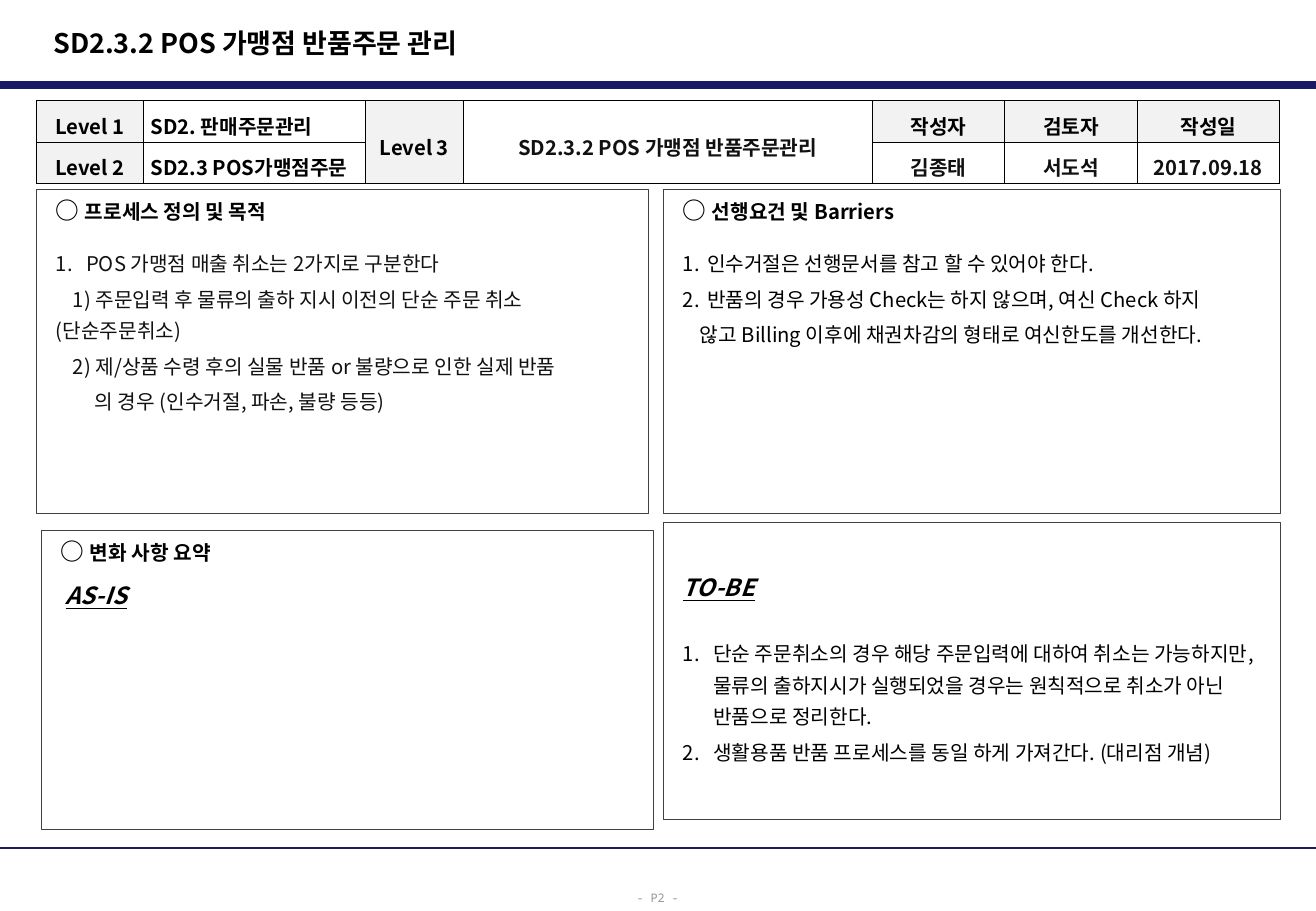
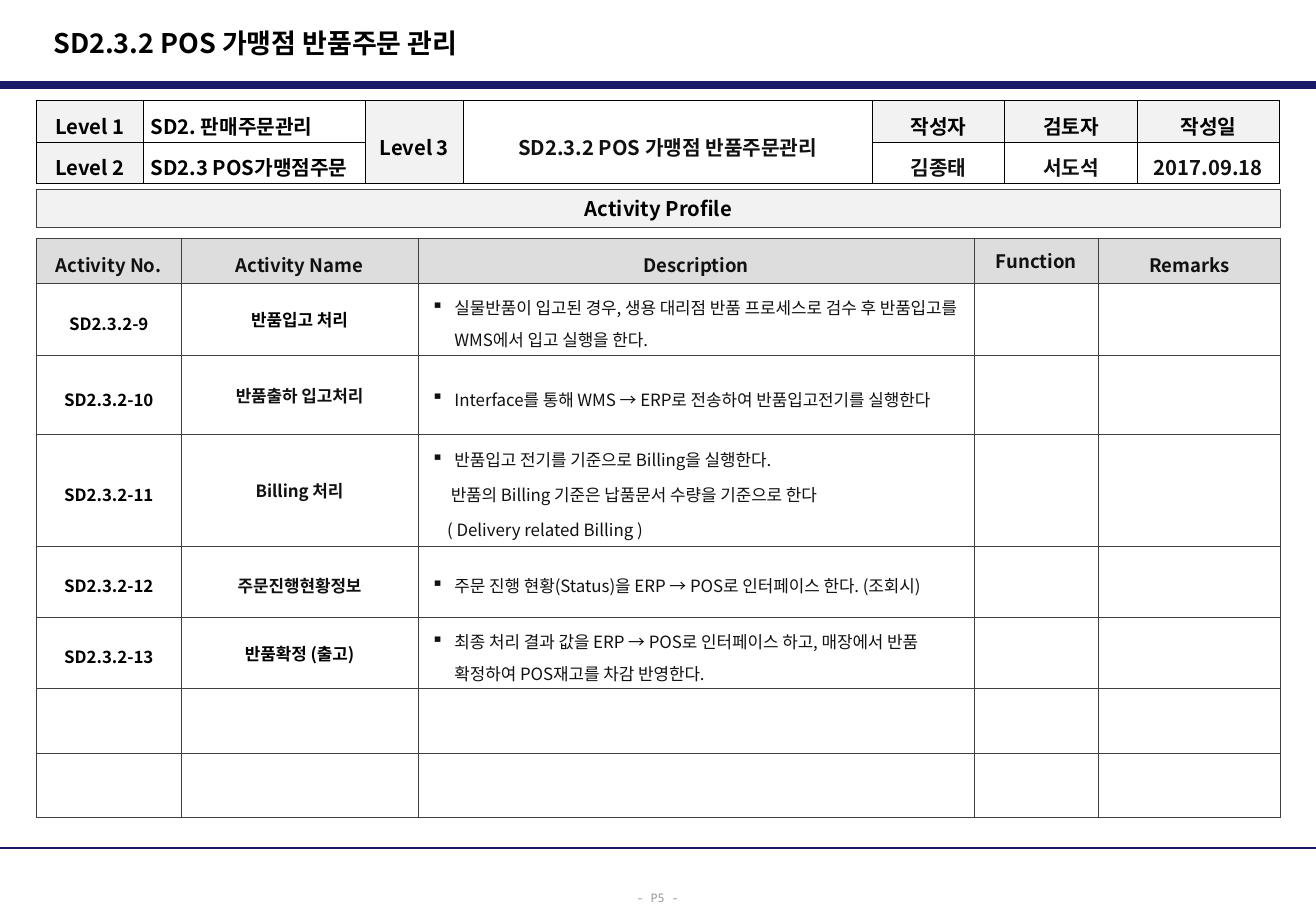
from dataclasses import dataclass

from lxml import etree
from pptx import Presentation
from pptx import util as u
from pptx.dml.color import RGBColor
from pptx.enum import shapes, text
from pptx.oxml import ns

FONT, PAGE_FONT = "Noto Sans CJK KR", "Noto Sans Mono"
NAVY, BLACK, INK, GREY = "191966", "000000", "111111", "969696"
BORDER, PALE, HEADER = "404040", "F2F2F2", "DDDDDD"
WIDTH, HEIGHT = 10.83, 7.5
LEFT, CONTENT_WIDTH = 0.3, 10.24
PANEL_INSETS = (0.16, 0.05, 0.1, 0.05)
LOOSE = 1.3
CENTER = text.PP_ALIGN.CENTER


@dataclass
class Para:
    """One paragraph with its formatting."""
    text: str
    size: float = 12
    color: str = BLACK
    bold: bool = False
    slanted: bool = False
    align: object = None
    spacing: float = None
    before: float = 0
    margin: float = 0
    first: float = 0
    bullet: str = ""
    mark: str = ""
    font: str = FONT


def rgb(value):
    """Turn a hex string into a colour."""
    return RGBColor.from_string(value)


def add_element(parent, tag, **attributes):
    """Append a drawing element."""
    return etree.SubElement(parent, ns.qn(tag), attributes)


def format_run(run, para, size):
    """Apply a paragraph's character format to a run."""
    font = run.font
    font.size, font.bold = u.Pt(size), para.bold
    font.color.rgb = rgb(para.color)
    font.name = para.font
    if para.slanted:
        font.italic = font.underline = True
    add_element(run._r.get_or_add_rPr(), "a:ea", typeface=para.font)


def write(frame, paras):
    """Fill a text frame with paragraphs."""
    for index, para in enumerate(paras):
        line = frame.add_paragraph() if index else frame.paragraphs[0]
        props = line._p.get_or_add_pPr()
        props.set("marL", str(u.Inches(para.margin)))
        props.set("indent", str(u.Inches(para.first)))
        if para.bullet == "1.":
            add_element(props, "a:buAutoNum", type="arabicPeriod")
        elif para.bullet:
            add_element(props, "a:buChar", char=para.bullet)
        else:
            add_element(props, "a:buNone")
        line.text = para.mark or para.text
        line.alignment = para.align or text.PP_ALIGN.LEFT
        if para.spacing:
            line.line_spacing = para.spacing
        if index:
            line.space_before = u.Pt(para.before)
        if para.mark:
            format_run(line.runs[0], para, 14)
            line.add_run().text = para.text
        format_run(line.runs[-1], para, para.size)


def set_insets(target, insets):
    """Set the left, top, right and bottom margins."""
    (target.margin_left, target.margin_top,
     target.margin_right, target.margin_bottom) = map(u.Inches, insets)


def add_rule(slide, y, weight):
    """Draw a full-width navy rule."""
    rule = slide.shapes.add_connector(
        shapes.MSO_CONNECTOR.STRAIGHT, 0, u.Inches(y), u.Inches(WIDTH), u.Inches(y))
    rule.line.color.rgb, rule.line.width = rgb(NAVY), u.Pt(weight)
    add_element(rule._element.spPr, "a:effectLst")


def add_label(slide, box, para, wrap=True, anchor=text.MSO_ANCHOR.TOP):
    """Add a text box with one paragraph."""
    frame = slide.shapes.add_textbox(*map(u.Inches, box)).text_frame
    frame.word_wrap, frame.vertical_anchor = wrap, anchor
    write(frame, [para])


def add_panel(slide, box, paras, insets=PANEL_INSETS, fill=None,
              anchor=text.MSO_ANCHOR.TOP):
    """Add a thin-bordered panel of text."""
    panel = slide.shapes.add_shape(
        shapes.MSO_SHAPE.RECTANGLE, *map(u.Inches, box))
    panel.shadow.inherit = False
    panel.line.color.rgb, panel.line.width = rgb(BORDER), u.Pt(0.5)
    if fill:
        panel.fill.solid()
        panel.fill.fore_color.rgb = rgb(fill)
    else:
        panel.fill.background()
    frame = panel.text_frame
    frame.word_wrap, frame.vertical_anchor = True, anchor
    set_insets(frame, insets)
    write(frame, paras)


def add_grid(slide, top, columns, rows):
    """Add an unstyled table of the given column widths and row heights."""
    grid = slide.shapes.add_table(
        len(rows), len(columns), u.Inches(LEFT), u.Inches(top),
        u.Inches(CONTENT_WIDTH), u.Inches(sum(rows))).table
    grid.first_row = grid.horz_banding = False
    for column, width in zip(grid.columns, columns):
        column.width = u.Inches(width)
    for row, height in zip(grid.rows, rows):
        row.height = u.Inches(height)
    return grid


def fill_cell(cell, paras, insets, border, fill=None):
    """Give a cell its borders, fill and text."""
    props = cell._tc.get_or_add_tcPr()
    for side in ("a:lnL", "a:lnR", "a:lnT", "a:lnB"):
        edge = add_element(props, side, w=str(u.Pt(0.5)))
        add_element(add_element(edge, "a:solidFill"), "a:srgbClr", val=border)
    if fill:
        cell.fill.solid()
        cell.fill.fore_color.rgb = rgb(fill)
    else:
        cell.fill.background()
    cell.vertical_anchor = text.MSO_ANCHOR.MIDDLE
    set_insets(cell, insets)
    write(cell.text_frame, paras)


def add_level_table(slide):
    """Add the process level and author table."""
    grid = add_grid(slide, 0.83, [0.88, 1.83, 0.8, 3.37, 1.09, 1.09, 1.17], [0.34, 0.34])
    rows = [
        ["Level 1", "SD2. 판매주문관리", "Level 3", "SD2.3.2 POS 가맹점 반품주문관리",
         "작성자", "검토자", "작성일"],
        ["Level 2", "SD2.3 POS가맹점주문", "", "", "김종태", "서도석", "2017.09.18"],
    ]
    for column in (2, 3):
        grid.cell(0, column).merge(grid.cell(1, column))
    for r, row in enumerate(rows):
        for c, words in enumerate(row):
            label = c in (0, 2) or (r == 0 and c > 3)
            para = Para(words, bold=True, spacing=LOOSE,
                        color=BLACK if label or c == 1 else INK,
                        align=None if c == 1 else CENTER)
            fill_cell(grid.cell(r, c), [para] if words else [],
                      (0.06, 0.01, 0.06, 0.01), BLACK, PALE if label else None)


def add_activity_table(slide):
    """Add the table of activities."""
    def step(words):
        return Para(words, 10, INK, spacing=LOOSE, margin=0.19, first=-0.19, bullet="▪")

    def note(words, margin):
        return Para(words, 10, INK, spacing=LOOSE, before=2, margin=margin)

    activities = [
        ("SD2.3.2-9", "반품입고 처리",
         [step("실물반품이 입고된 경우, 생용 대리점 반품 프로세스로 검수 후 반품입고를 WMS에서 입고 실행을 한다.")]),
        ("SD2.3.2-10", "반품출하 입고처리",
         [step("Interface를 통해 WMS → ERP로 전송하여 반품입고전기를 실행한다")]),
        ("SD2.3.2-11", "Billing 처리",
         [step("반품입고 전기를 기준으로 Billing을 실행한다."),
          note("반품의 Billing 기준은 납품문서 수량을 기준으로 한다", 0.16),
          note("( Delivery related Billing )", 0.13)]),
        ("SD2.3.2-12", "주문진행현황정보",
         [step("주문 진행 현황(Status)을 ERP → POS로 인터페이스 한다. (조회시)")]),
        ("SD2.3.2-13", "반품확정 (출고)",
         [step("최종 처리 결과 값을 ERP → POS로 인터페이스 하고, 매장에서 반품 확정하여 POS재고를 차감 반영한다.")]),
    ]
    grid = add_grid(slide, 1.96, [1.19, 1.95, 4.58, 1.02, 1.5],
                    [0.37, 0.6, 0.65, 0.92, 0.58, 0.59, 0.53, 0.53])
    insets = (0.11, 0.04, 0.11, 0.04)
    headings = ["Activity No.", "Activity Name", "Description", "Function", "Remarks"]
    for c, words in enumerate(headings):
        plain = words == "Function"
        para = Para(words, 11, INK, True, align=CENTER, spacing=None if plain else LOOSE)
        fill_cell(grid.cell(0, c), [para], (0.11, 0, 0.11, 0) if plain else insets,
                  BORDER, HEADER)
    for r in range(1, len(grid.rows)):
        contents = [[] for _ in headings]
        if r <= len(activities):
            number, name, steps = activities[r - 1]
            name_spacing = LOOSE if number == "SD2.3.2-12" else None
            contents[:3] = [
                [Para(number, 10, bold=True, align=CENTER, spacing=LOOSE)],
                [Para(name, 10, BLACK if r in (1, 5) else INK, True, align=CENTER,
                      spacing=name_spacing)],
                steps]
        for c, paras in enumerate(contents):
            fill_cell(grid.cell(r, c), paras, insets, BORDER)


def add_frame(deck, page):
    """Add a slide with the shared title, rules, page number and level table."""
    slide = deck.slides.add_slide(deck.slide_layouts[6])
    add_rule(slide, 0.7, 4.5)
    add_rule(slide, 6.98, 1.5)
    add_label(slide, (5.14, 7.25, 0.56, 0.25),
              Para(f"- P{page} -", 7, GREY, spacing=LOOSE, font=PAGE_FONT), wrap=False)
    add_label(slide, (0.34, 0.16, 7.11, 0.38),
              Para("SD2.3.2 POS 가맹점 반품주문 관리", 16, bold=True),
              anchor=text.MSO_ANCHOR.MIDDLE)
    add_level_table(slide)
    return slide


def heading(words):
    """Make a panel heading with its circle."""
    return Para(words, bold=True, mark="○ ")


def state(words, before=0, margin=0):
    """Make an underlined state title."""
    return Para(words, 14, bold=True, slanted=True, before=before, margin=margin)


def item(words, hang, before=2.4, color=BLACK):
    """Make a numbered item."""
    return Para(words, color=color, spacing=LOOSE, before=before,
                margin=hang, first=-hang, bullet="1.")


def detail(words, margin=0, first=0, color=INK):
    """Make an unnumbered line under an item."""
    return Para(words, color=color, spacing=LOOSE, before=2.4, margin=margin, first=first)


def add_definition_slide(deck):
    """Add the slide with the process definition and changes."""
    slide = add_frame(deck, 2)
    add_panel(slide, (LEFT, 1.56, 5.04, 2.67), [
        heading("프로세스 정의 및 목적"),
        item("POS 가맹점 매출 취소는 2가지로 구분한다", 0.25, 12, INK),
        detail("1) 주문입력 후 물류의 출하 지시 이전의 단순 주문 취소(단순주문취소)", first=0.14),
        detail("2) 제/상품 수령 후의 실물 반품 or 불량으로 인한 실제 반품", first=0.14),
        detail("의 경우 (인수거절, 파손, 불량 등등)", margin=0.32)])
    add_panel(slide, (5.46, 1.56, 5.08, 2.67), [
        heading("선행요건 및 Barriers"),
        item("인수거절은 선행문서를 참고 할 수 있어야 한다.", 0.2, 12),
        item("반품의 경우 가용성 Check는 하지 않으며, 여신 Check 하지", 0.2),
        detail("않고 Billing 이후에 채권차감의 형태로 여신한도를 개선한다.", 0.14, color=BLACK)])
    add_panel(slide, (0.34, 4.37, 5.04, 2.46), [
        heading("변화 사항 요약"), state("AS-IS", 9.6, 0.04)])
    add_panel(slide, (5.46, 4.3, 5.08, 2.45), [
        state("TO-BE"),
        item("단순 주문취소의 경우 해당 주문입력에 대하여 취소는 가능하지만, 물류의 출하지시가 "
             "실행되었을 경우는 원칙적으로 취소가 아닌 반품으로 정리한다.", 0.25, 19.2),
        item("생활용품 반품 프로세스를 동일 하게 가져간다. (대리점 개념)", 0.25),
    ], insets=(0.16, 0.42, 0.1, 0.05))


def add_activity_slide(deck):
    """Add the slide with the activity profile."""
    slide = add_frame(deck, 5)
    add_panel(slide, (LEFT, 1.56, CONTENT_WIDTH, 0.31),
              [Para("Activity Profile", bold=True, align=CENTER)],
              (0.1, 0.05, 0.1, 0.05), PALE, text.MSO_ANCHOR.MIDDLE)
    add_activity_table(slide)


def main():
    """Build and save the deck."""
    deck = Presentation()
    deck.slide_width, deck.slide_height = u.Inches(WIDTH), u.Inches(HEIGHT)
    add_definition_slide(deck)
    add_activity_slide(deck)
    deck.save("out.pptx")


if __name__ == "__main__":
    main()
